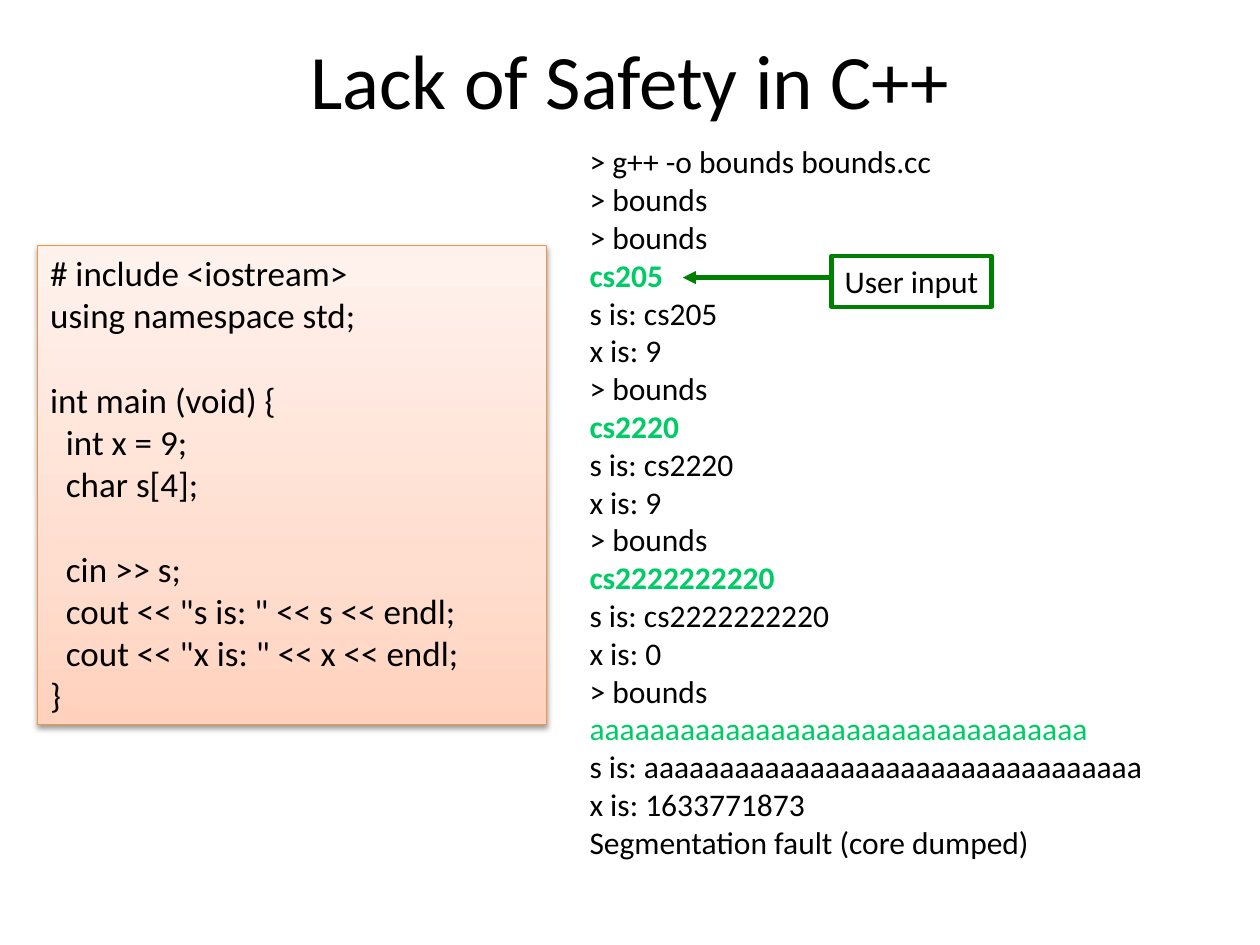
"""Build the slide on the lack of bounds safety in C++."""
from lxml import etree
from pptx import Presentation
from pptx.dml.color import RGBColor
from pptx.enum.shapes import MSO_CONNECTOR, MSO_SHAPE
from pptx.enum.text import MSO_ANCHOR, MSO_AUTO_SIZE, PP_ALIGN
from pptx.oxml.ns import qn
from pptx.util import Pt

LEFT, CENTER = PP_ALIGN.LEFT, PP_ALIGN.CENTER
TOP, MIDDLE = MSO_ANCHOR.TOP, MSO_ANCHOR.MIDDLE
GROW, FIXED = MSO_AUTO_SIZE.SHAPE_TO_FIT_TEXT, MSO_AUTO_SIZE.NONE
RECT, STRAIGHT = MSO_SHAPE.RECTANGLE, MSO_CONNECTOR.STRAIGHT

COLORS = {"text": "000000", "input": "00CC66", "frame": "008000", "edge": "F69240",
          "low": "FFD2BD", "mid": "FFDED0", "high": "FFF2ED"}
FONT = "Calibri"
STOPS = [(0, "low"), (35, "mid"), (100, "high")]
SHADOW = {"blurRad": Pt(3.1), "dist": Pt(1.6), "dir": 90 * 60000, "rotWithShape": 0}

TITLE = ["Lack of Safety in C++"]
LABEL = ["User input"]
CODE = [
    ["# include <iostream>", "using namespace std;"],
    ["int main (void) {", "  int x = 9;", "  char s[4];"],
    ["  cin >> s;", '  cout << "s is: " << s << endl;',
     '  cout << "x is: " << x << endl;', "}"],
]
BUILD = "> g++ -o bounds bounds.cc"
PROMPT = "> bounds"
RUNS = [("cs205", "9", True), ("cs2220", "9", True), ("cs2222222220", "0", True),
        ("aaaaaaaaaaaaaaaaaaaaaaaaaaaaaaaaa", "1633771873", False)]
FAULT = "Segmentation fault (core dumped)"

BOXES = {
    "title": (36, 0, 648, 90),
    "code": (21.6, 140.4, 290.9, 273.6),
    "shell": (329.8, 77.8, 383.8, 421.9),
    "label": (475.2, 146.2, 91.4, 29.1),
}
ARROW = (473.8, 158.6, 390.2, 158.6)


def tint(name):
    return RGBColor.from_string(COLORS[name])


def apply(obj, **props):
    for key, value in props.items():
        setattr(obj, key, value)


def write(frame, lines, size, align=LEFT, anchor=TOP, auto=GROW, wrap=True):
    apply(frame, word_wrap=wrap, auto_size=auto, vertical_anchor=anchor)
    for num, (text, color, bold, gap, indent) in enumerate(lines):
        para = frame.add_paragraph() if num else frame.paragraphs[0]
        apply(para, alignment=align, space_before=Pt(gap))
        para._p.get_or_add_pPr().set("marL", str(Pt(indent)))
        run = para.add_run()
        run.text = text
        apply(run.font, name=FONT, size=Pt(size), bold=bold)
        run.font.color.rgb = tint(color)


def plain(texts):
    return [(text, "text", False, 0, 0) for text in texts]


def listing(size):
    return [(text.lstrip(), "text", False,
             size * 1.22 if part and not num else 0,
             size * 0.45 if text.startswith(" ") else 0)
            for part, block in enumerate(CODE) for num, text in enumerate(block)]


def session():
    lines = plain([BUILD, PROMPT])
    for word, value, bold in RUNS:
        lines += plain([PROMPT])
        lines.append((word, "input", bold, 0, 0))
        lines += plain([f"s is: {word}", f"x is: {value}"])
    return lines + plain([FAULT])


def outline(shape, color, width):
    shape.line.color.rgb = tint(color)
    shape.line.width = Pt(width)


def node(parent, tag, **attrs):
    return etree.SubElement(parent, qn(tag), {k: str(v) for k, v in attrs.items()})


def shade(shape):
    shape.fill.gradient()
    shape.fill.gradient_angle = 90
    props = shape._element.spPr
    stops = props.find(".//" + qn("a:gsLst"))
    for stop in list(stops):
        stops.remove(stop)
    for pos, name in STOPS:
        node(node(stops, "a:gs", pos=pos * 1000), "a:srgbClr", val=COLORS[name])
    cast = node(props.find(qn("a:effectLst")), "a:outerShdw", **SHADOW)
    node(node(cast, "a:srgbClr", val=COLORS["text"]), "a:alpha", val=38000)


def main():
    deck = Presentation()
    apply(deck, slide_width=Pt(720), slide_height=Pt(540))
    shapes = deck.slides.add_slide(deck.slide_layouts[6]).shapes
    spot = {name: [Pt(v) for v in box] for name, box in BOXES.items()}

    title = shapes.add_textbox(*spot["title"])
    write(title.text_frame, plain(TITLE), 44, CENTER, MIDDLE, FIXED)

    code = shapes.add_shape(RECT, *spot["code"])
    code.shadow.inherit = False
    outline(code, "edge", 0.75)
    shade(code)
    write(code.text_frame, listing(20), 20)

    shell = shapes.add_textbox(*spot["shell"])
    write(shell.text_frame, session(), 18)

    label = shapes.add_shape(RECT, *spot["label"])
    label.shadow.inherit = False
    label.fill.background()
    outline(label, "frame", 2.5)
    write(label.text_frame, plain(LABEL), 18, CENTER, wrap=False)

    arrow = shapes.add_connector(STRAIGHT, *[Pt(v) for v in ARROW])
    outline(arrow, "frame", 2.5)
    node(arrow.line._get_or_add_ln(), "a:tailEnd", type="triangle")
    node(arrow._element.spPr, "a:effectLst")

    deck.save("out.pptx")


if __name__ == "__main__":
    main()
